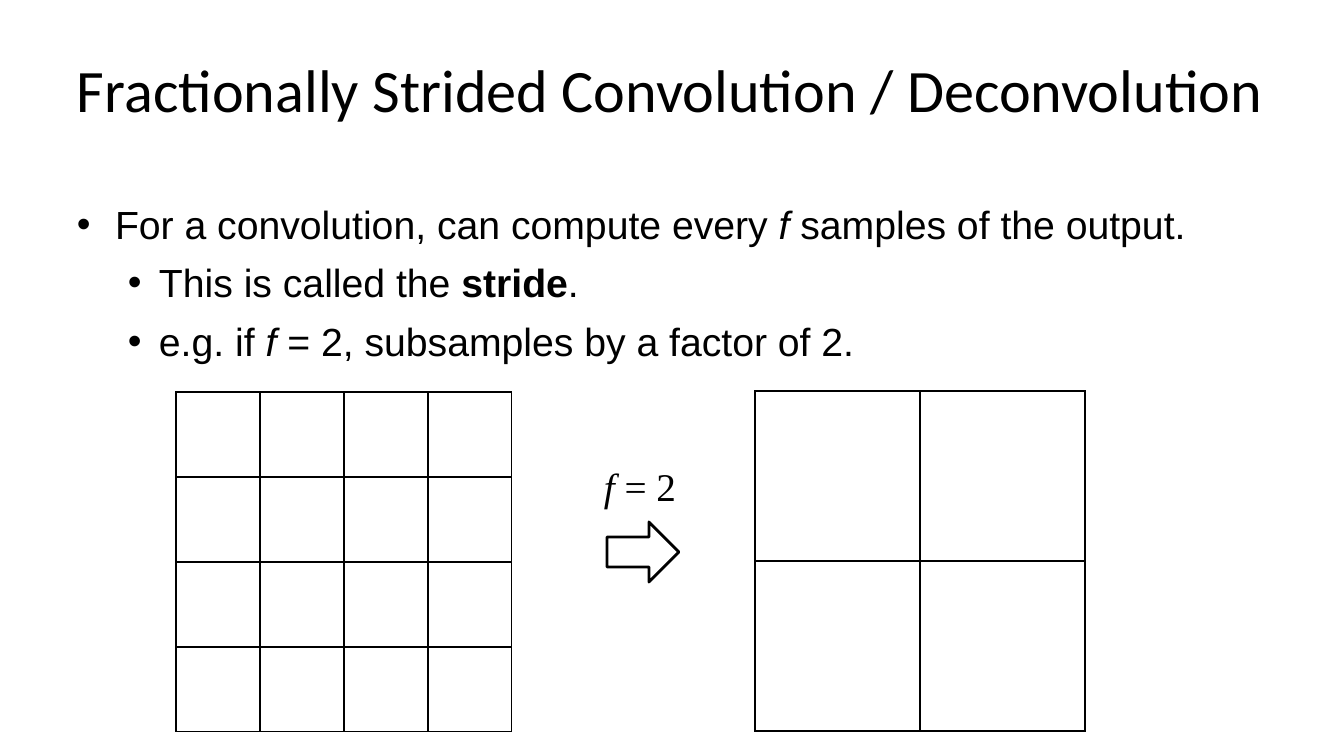
import pptx
import pptx.util
import pptx.dml.color
import pptx.enum.shapes
import pptx.enum.text
import pptx.oxml

PX = 914400 / 100.8
COLORS = {"ink": "000000", "paper": "FFFFFF"}
NS = 'xmlns:a="http://schemas.openxmlformats.org/drawingml/2006/main"'
ink = pptx.dml.color.RGBColor.from_string(COLORS["ink"])
paper = pptx.dml.color.RGBColor.from_string(COLORS["paper"])


def px(*lengths):
    return [pptx.util.Emu(round(n * PX)) for n in lengths]


def add_runs(p, runs, name, size):
    for text, style in runs:
        r = p.add_run()
        r.text = text
        r.font.color.rgb = ink
        formats = {"name": name, "size": pptx.util.Pt(size), "bold": False, "italic": False}
        for key, value in (formats | style).items():
            setattr(r.font, key, value)


prs = pptx.Presentation()
prs.slide_width, prs.slide_height = px(1344, 756)
s = prs.slides.add_slide(prs.slide_layouts[1])
title, body = s.placeholders

# Title and body boxes
for sp, box, top_inset, anchor in (
    (title, (67, 25, 1252, 126), 5, pptx.enum.text.MSO_ANCHOR.MIDDLE),
    (body, (67, 189, 1263, 499), 9, pptx.enum.text.MSO_ANCHOR.TOP),
):
    sp.left, sp.top, sp.width, sp.height = px(*box)
    tf = sp.text_frame
    tf.margin_left, tf.margin_top, tf.margin_right, tf.margin_bottom = px(10, top_inset, 10, 5)
    formats = {"word_wrap": True, "auto_size": pptx.enum.text.MSO_AUTO_SIZE.NONE,
               "vertical_anchor": anchor}
    for key, value in formats.items():
        setattr(tf, key, value)

p = title.text_frame.paragraphs[0]
p.alignment = pptx.enum.text.PP_ALIGN.LEFT
add_runs(p, [("Fractionally Strided Convolution / Deconvolution", {})], "Calibri", 43)

# Bullets
italic, bold = {"italic": True}, {"bold": True}
bullets = [
    (0, [("For a convolution, can compute every ", {}), ("f", italic),
         (" samples of the output.", {})]),
    (1, [("This is called the ", {}), ("stride", bold), (".", {})]),
    (1, [("e.g. if ", {}), ("f", italic), (" = 2, subsamples by a factor of 2.", {})]),
]
indents = [(38, -38), (82, -31)]
tf = body.text_frame
for i, (level, runs) in enumerate(bullets):
    p = tf.add_paragraph() if i else tf.paragraphs[0]
    pPr = p._p.get_or_add_pPr()
    margin, indent = px(*indents[level])
    pPr.set("marL", str(margin))
    pPr.set("indent", str(indent))
    for bullet in ('<a:buFont {} typeface="Arial"/>', '<a:buChar {} char="•"/>'):
        pPr.append(pptx.oxml.parse_xml(bullet.format(NS)))
    formats = {"level": level, "line_spacing": 1.05,
               "space_before": pptx.util.Pt(4.8 if i else 0), "space_after": pptx.util.Pt(1.6)}
    for key, value in formats.items():
        setattr(p, key, value)
    add_runs(p, runs, "Arial", 28)

# Output and input grids
for left, top, count, cell_w, cell_h in ((755, 391, 2, 165, 170), (176, 392, 4, 84, 85)):
    box = px(left, top, count * cell_w, count * cell_h)
    table = s.shapes.add_table(count, count, *box).table
    table.first_row = table.horz_banding = False
    for cell in table.iter_cells():
        tcPr = cell._tc.get_or_add_tcPr()
        for side in ("lnL", "lnR", "lnT", "lnB"):
            tcPr.append(pptx.oxml.parse_xml(
                f'<a:{side} {NS} w="12700"><a:solidFill><a:srgbClr val="{COLORS["ink"]}"/>'
                f'</a:solidFill></a:{side}>'))
        cell.fill.background()

# Arrow
sp = s.shapes.add_shape(pptx.enum.shapes.MSO_SHAPE.RIGHT_ARROW, *px(607, 522, 72, 60))
sp.shadow.inherit = False
sp.fill.solid()
sp.fill.fore_color.rgb = paper
sp.line.color.rgb = ink
sp.line.width = pptx.util.Pt(2)

# Stride label
sp = s.shapes.add_textbox(*px(594, 457, 93, 57))
tf = sp.text_frame
tf.word_wrap = False
tf.auto_size = pptx.enum.text.MSO_AUTO_SIZE.SHAPE_TO_FIT_TEXT
add_runs(tf.paragraphs[0], [("f", italic), (" = 2", {})], "Times New Roman", 28)

prs.save("out.pptx")
